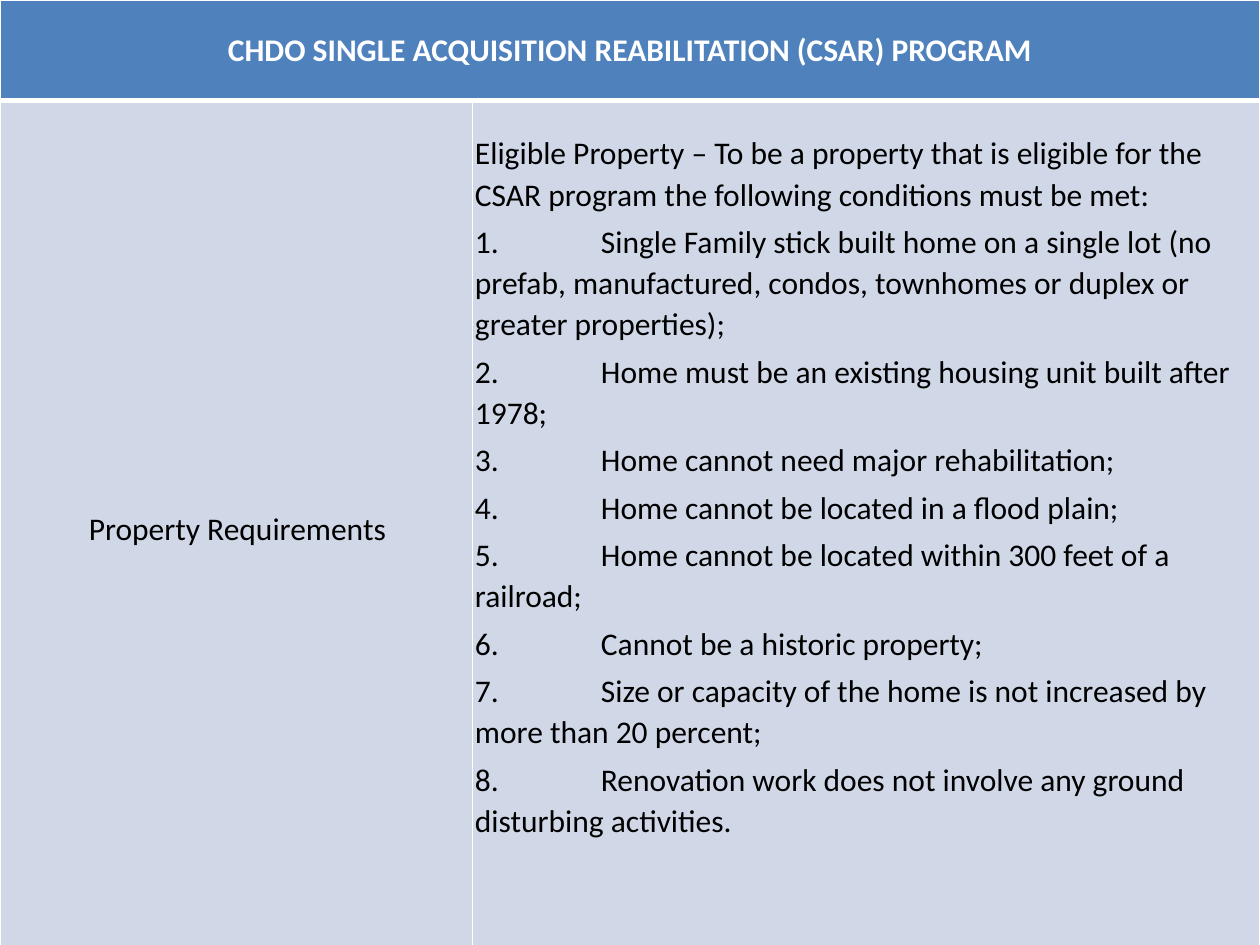
from lxml import etree
from pptx import Presentation
from pptx.dml.color import RGBColor
from pptx.enum.text import MSO_ANCHOR, PP_ALIGN
from pptx.oxml.ns import qn
from pptx.util import Inches, Pt

CENTER, LEFT = PP_ALIGN.CENTER, PP_ALIGN.LEFT
MIDDLE = MSO_ANCHOR.MIDDLE
BLANK_LAYOUT = 6

HEADING = "CHDO SINGLE ACQUISITION REABILITATION (CSAR) PROGRAM"
TOPIC = "Property Requirements"
INTRO = ("Eligible Property – To be a property that is eligible for the "
         "CSAR program the following conditions must be met:")
CONDITIONS = [
    "Single Family stick built home on a single lot (no prefab, manufactured, "
    "condos, townhomes or duplex or greater properties);",
    "Home must be an existing housing unit built after 1978;",
    "Home cannot need major rehabilitation;",
    "Home cannot be located in a flood plain;",
    "Home cannot be located within 300 feet of a railroad;",
    "Cannot be a historic property;",
    "Size or capacity of the home is not increased by more than 20 percent;",
    "Renovation work does not involve any ground disturbing activities.",
]
COLUMN_WIDTHS = [3.75, 6.25]
ROW_HEIGHTS = [0.8, 6.78]
HEADER_FILL, BODY_FILL, RULE_COLOR = "4F81BD", "D0D8E8", "FFFFFF"


def color(hex_value):
    return RGBColor.from_string(hex_value)


def add_tab_stop(paragraph, position):
    tabs = etree.SubElement(paragraph._p.get_or_add_pPr(), qn("a:tabLst"))
    etree.SubElement(tabs, qn("a:tab"), pos=str(Inches(position)), algn="l")


def add_border(cell, side, points):
    """Draw one cell edge; side is lnL, lnR, lnT or lnB."""
    line = etree.Element(qn(f"a:{side}"), w=str(Pt(points)))
    solid = etree.SubElement(line, qn("a:solidFill"))
    etree.SubElement(solid, qn("a:srgbClr"), val=RULE_COLOR)
    cell._tc.get_or_add_tcPr().insert(0, line)


def fill_cell(cell, lines, fill, text_color, align, bold=False):
    cell.fill.solid()
    cell.fill.fore_color.rgb = color(fill)
    cell.vertical_anchor = MIDDLE
    frame = cell.text_frame
    frame.text = "\n".join(lines)
    for paragraph in frame.paragraphs:
        paragraph.alignment = align
        if "\t" in paragraph.text:
            add_tab_stop(paragraph, 1)
        font = paragraph.font
        font.name, font.size, font.bold = "Calibri", Pt(18), bold
        font.color.rgb = color(text_color)


def format_body(cell, bottom=0):
    """Tighten the cell margins and space its paragraphs."""
    cell.margin_left = Inches(0.02)
    cell.margin_right = cell.margin_top = 0
    cell.margin_bottom = Inches(bottom)
    for index, paragraph in enumerate(cell.text_frame.paragraphs):
        paragraph.line_spacing = 1.07
        paragraph.space_before = Pt(3.6 if index else 0)


presentation = Presentation()
presentation.slide_width, presentation.slide_height = Inches(10), Inches(7.5)
slide = presentation.slides.add_slide(presentation.slide_layouts[BLANK_LAYOUT])

table = slide.shapes.add_table(
    len(ROW_HEIGHTS), len(COLUMN_WIDTHS), 0, 0,
    Inches(sum(COLUMN_WIDTHS)), Inches(sum(ROW_HEIGHTS))).table
for column, width in zip(table.columns, COLUMN_WIDTHS):
    column.width = Inches(width)
for row, height in zip(table.rows, ROW_HEIGHTS):
    row.height = Inches(height)

header, topic, requirements = table.cell(0, 0), table.cell(1, 0), table.cell(1, 1)
header.merge(table.cell(0, 1))
fill_cell(header, [HEADING], HEADER_FILL, "FFFFFF", CENTER, bold=True)

numbered = [f"{number}.\t{text}" for number, text in enumerate(CONDITIONS, 1)]
fill_cell(topic, [TOPIC], BODY_FILL, "000000", CENTER)
fill_cell(requirements, [INTRO] + numbered, BODY_FILL, "000000", LEFT)
format_body(topic)
format_body(requirements, bottom=0.66)

for column in range(len(COLUMN_WIDTHS)):
    add_border(table.cell(0, column), "lnB", 3)
    add_border(table.cell(1, column), "lnT", 3)

presentation.save("out.pptx")
